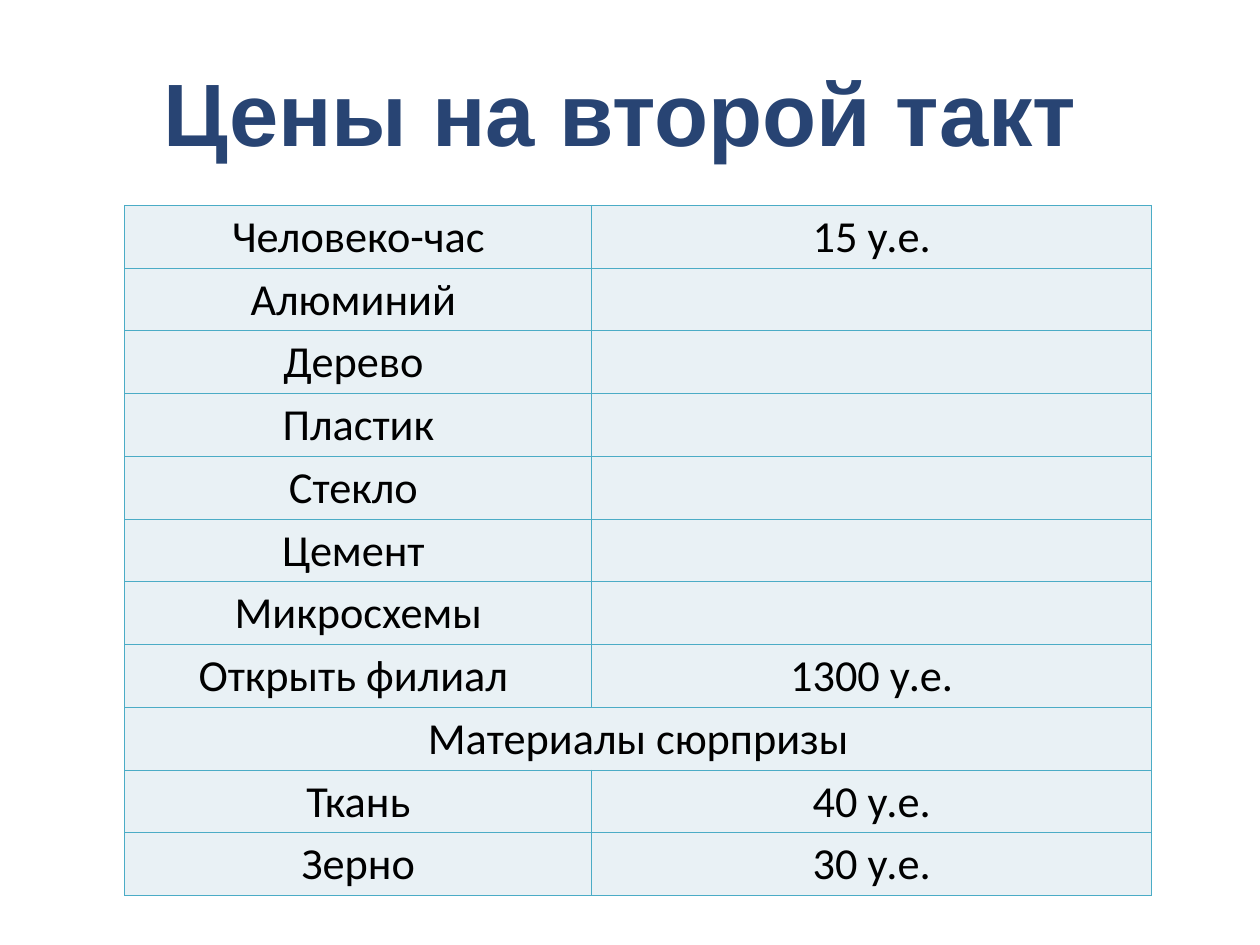
from lxml import etree
from pptx import Presentation
from pptx import util as u
from pptx.dml import color
from pptx.enum import text
from pptx.oxml import ns

PRICES = [
    ("Человеко-час", "15 у.е."),
    ("Алюминий ", ""),
    ("Дерево ", ""),
    ("Пластик", ""),
    ("Стекло ", ""),
    ("Цемент ", ""),
    ("Микросхемы", ""),
    ("Открыть филиал ", "1300 у.е."),
    ("Материалы сюрпризы", None),
    ("Ткань", "40 у.е."),
    ("Зерно", "30 у.е."),
]


def rgb(value):
    return color.RGBColor.from_string(value)


class PriceSlide:
    """Holds the price slide with its style and draws its title and table."""

    title_color = "284473"
    text_color = "000000"
    fill_color = "E9F1F5"
    border_color = "4BACC6"

    def __init__(self, deck):
        self.slide = deck.slides.add_slide(deck.slide_layouts[5])

    def set_text(self, frame, words, font, size, hue, bold=False):
        frame.text = words
        para = frame.paragraphs[0]
        para.alignment = text.PP_ALIGN.CENTER
        para.font.name = font
        para.font.size = u.Pt(size)
        para.font.bold = bold
        para.font.color.rgb = rgb(hue)

    def title(self, words, left, top, width, height):
        box = self.slide.shapes.title
        box.left, box.top = u.Pt(left), u.Pt(top)
        box.width, box.height = u.Pt(width), u.Pt(height)
        frame = box.text_frame
        frame.word_wrap = True
        frame.auto_size = text.MSO_AUTO_SIZE.NONE
        frame.vertical_anchor = text.MSO_ANCHOR.MIDDLE
        frame.margin_left = frame.margin_right = u.Pt(10)
        frame.margin_top = frame.margin_bottom = u.Pt(5)
        self.set_text(frame, words, "Arial", 72, self.title_color, bold=True)

    def border(self, cell):
        properties = cell._tc.get_or_add_tcPr()
        for side in ("lnL", "lnR", "lnT", "lnB"):
            line = etree.SubElement(properties, ns.qn(f"a:{side}"), w=str(u.Pt(1)))
            fill = etree.SubElement(line, ns.qn("a:solidFill"))
            etree.SubElement(fill, ns.qn("a:srgbClr"), val=self.border_color)

    def cell(self, cell, words):
        self.border(cell)
        cell.fill.solid()
        cell.fill.fore_color.rgb = rgb(self.fill_color)
        cell.vertical_anchor = text.MSO_ANCHOR.MIDDLE
        cell.margin_left = cell.margin_right = cell.margin_top = u.Pt(0.75)
        cell.margin_bottom = u.Pt(0)
        if words:
            self.set_text(cell.text_frame, words, "Calibri", 36, self.text_color)

    def table(self, rows, left, top, widths, row_height):
        table = self.slide.shapes.add_table(
            len(rows), len(widths), u.Pt(left), u.Pt(top),
            u.Pt(sum(widths)), u.Pt(row_height * len(rows))).table
        table.first_row = table.horz_banding = False
        for column, width in zip(table.columns, widths):
            column.width = u.Pt(width)
        for index, row in enumerate(rows):
            table.rows[index].height = u.Pt(row_height)
            for position, words in enumerate(row):
                self.cell(table.cell(index, position), words)
            if None in row:
                table.cell(index, 0).merge(table.cell(index, len(widths) - 1))


def main():
    deck = Presentation()
    deck.slide_width, deck.slide_height = u.Pt(1024), u.Pt(768)
    page = PriceSlide(deck)
    page.title("Цены на второй такт ", 77, 22.5, 874, 135)
    page.table(PRICES, 101.5, 167, (379.5, 455), 51)
    deck.save("out.pptx")


if __name__ == "__main__":
    main()
